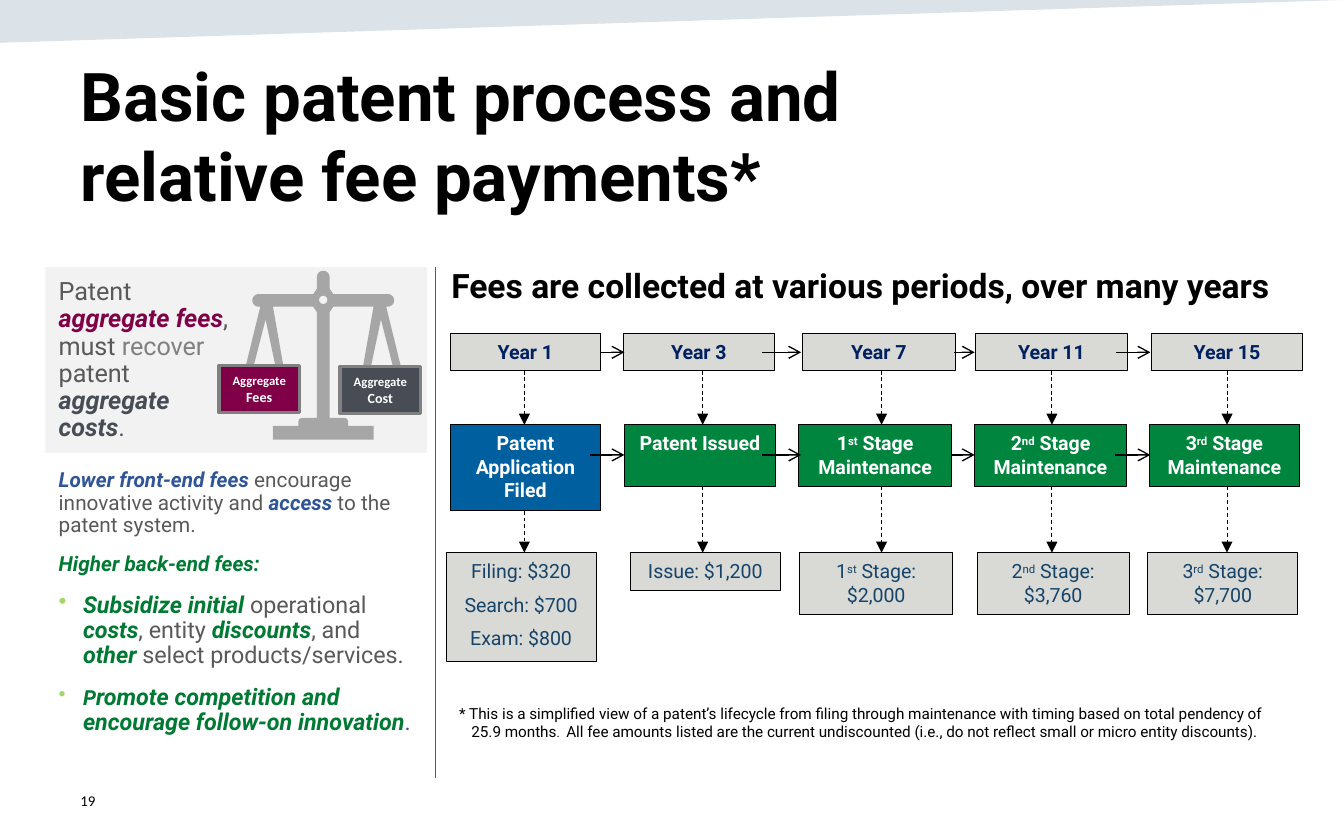
from math import cos, pi, sin

from lxml.etree import SubElement
from pptx import Presentation
from pptx.dml.color import RGBColor
from pptx.enum.dml import MSO_LINE_DASH_STYLE as DASH
from pptx.enum.shapes import MSO_CONNECTOR as CONN, MSO_SHAPE as SHAPE
from pptx.enum.text import MSO_ANCHOR as ANCHOR, PP_ALIGN as ALIGN
from pptx.oxml.ns import qn
from pptx.util import Cm, Pt

BLACK = RGBColor(0x00, 0x00, 0x00)
WHITE = RGBColor(0xFF, 0xFF, 0xFF)
NAVY = RGBColor(0x16, 0x44, 0x69)
YEAR_BLUE = RGBColor(0x00, 0x20, 0x60)
FILED_BLUE = RGBColor(0x00, 0x5F, 0x9E)
ACCENT_BLUE = RGBColor(0x2F, 0x55, 0x97)
BOX_GREEN = RGBColor(0x00, 0x85, 0x3E)
TEXT_GREEN = RGBColor(0x00, 0x7A, 0x33)
BULLET_GREEN = RGBColor(0xA4, 0xD7, 0x6B)
PLUM = RGBColor(0x7F, 0x00, 0x47)
SLATE = RGBColor(0x47, 0x4C, 0x55)
DARK_GREY = RGBColor(0x59, 0x59, 0x59)
MID_GREY = RGBColor(0x80, 0x80, 0x80)
SCALE_GREY = RGBColor(0xA6, 0xA6, 0xA6)
BOX_GREY = RGBColor(0xD9, 0xD9, 0xD6)
PANEL_GREY = RGBColor(0xF2, 0xF2, 0xF2)


def write(tf, paras, size=10.5, color=BLACK, font="Roboto", bold=False, align=ALIGN.LEFT,
          before=0, spacing=None, hanging=0, bullet=None, first=True):
    """Each paragraph is a list of runs: text, or (text, dict of run overrides)."""
    for i, runs in enumerate(paras):
        p = tf.paragraphs[0] if first and i == 0 else tf.add_paragraph()
        p.alignment, p.space_before = align, Pt(before)
        if spacing:
            p.line_spacing = spacing
        pPr = p._p.get_or_add_pPr()
        if hanging:
            pPr.set("marL", str(Cm(hanging)))
            pPr.set("indent", str(-Cm(hanging)))
        if bullet:
            SubElement(SubElement(pPr, qn("a:buClr")), qn("a:srgbClr")).set("val", str(bullet))
            SubElement(pPr, qn("a:buChar")).set("char", "•")
        for run in runs:
            text, own = (run, {}) if isinstance(run, str) else run
            for n, line in enumerate(text.split("\n")):
                if n:
                    p.add_line_break()
                r = p.add_run()
                r.text = line
                f = r.font
                f.name, f.size = font, Pt(own.get("size", size))
                f.color.rgb = own.get("color", color)
                f.bold, f.italic = own.get("bold", bold), own.get("italic", False)
                if own.get("sup"):
                    r._r.get_or_add_rPr().set("baseline", "30000")


def strong(text, color, **own):
    return text, dict(color=color, bold=True, italic=True, **own)


def textbox(s, x, y, w, h, paras, anchor=ANCHOR.TOP, **fmt):
    tf = s.shapes.add_textbox(Cm(x), Cm(y), Cm(w), Cm(h)).text_frame
    tf.word_wrap, tf.vertical_anchor = True, anchor
    write(tf, paras, **fmt)
    return tf


def box(s, x, y, w, h, fill, paras=(), line=BLACK, weight=0.5, margin=0.28,
        anchor=ANCHOR.TOP, **fmt):
    sp = s.shapes.add_shape(SHAPE.RECTANGLE, Cm(x), Cm(y), Cm(w), Cm(h))
    sp.shadow.inherit = False
    sp.fill.solid()
    sp.fill.fore_color.rgb = fill
    if line is None:
        sp.line.fill.background()
    else:
        sp.line.color.rgb, sp.line.width = line, Pt(weight)
    tf = sp.text_frame
    tf.word_wrap, tf.vertical_anchor = True, anchor
    tf.margin_left = tf.margin_right = Cm(margin)
    write(tf, paras, align=ALIGN.CENTER, **fmt)


def line(s, x1, y1, x2, y2, color=BLACK, weight=0.75, head=None, dashed=False):
    cn = s.shapes.add_connector(CONN.STRAIGHT, Cm(x1), Cm(y1), Cm(x2), Cm(y2))
    cn.line.color.rgb, cn.line.width = color, Pt(weight)
    if dashed:
        cn.line.dash_style = DASH.DASH
    if head:
        SubElement(cn.line._get_or_add_ln(), qn("a:tailEnd")).set("type", head)
    SubElement(cn._element.spPr, qn("a:effectLst"))


def outline(s, x, y, contours, fill):
    """Closed contours with points relative to (x, y)."""
    placed = [[(Cm(x + dx), Cm(y + dy)) for dx, dy in c] for c in contours]
    fb = s.shapes.build_freeform(*placed[0][0], scale=1.0)
    for i, pts in enumerate(placed):
        if i:
            fb.move_to(*pts[0])
        fb.add_line_segments(pts[1:], close=True)
    sp = fb.convert_to_shape()
    sp.shadow.inherit = False
    sp.fill.solid()
    sp.fill.fore_color.rgb = fill
    sp.line.fill.background()
    return sp


def arc(cx, cy, radius, start, end, steps=12):
    angles = [start + (end - start) * i / steps for i in range(steps + 1)]
    return [(cx + radius * cos(a), cy + radius * sin(a)) for a in angles]


def header(s, x, y, w):
    band = outline(s, x, y, [[(0, 0), (w, 0), (0, 0.81)]], NAVY)
    clr = band._element.spPr.find(qn("a:solidFill")).find(qn("a:srgbClr"))
    SubElement(clr, qn("a:alpha")).set("val", "15000")
    textbox(s, x + 1.27, y + 0.9, 22.86, 2.41,
            [["Basic patent process and \nrelative fee payments*"]], size=36, bold=True)


def balance(s, cx, y):
    """Pair of scales: the right half is listed and mirrored."""
    right = arc(0, 0.12, 0.12, -pi / 2, 0)
    right += [(0.12, 0.34), (0.19, 0.44)] + arc(1.22, 0.56, 0.12, -pi / 2, pi / 2)
    right += [(1.19, 0.68), (1.47, 1.82), (1.32, 1.82), (1.09, 0.92), (0.9, 1.82),
              (0.75, 1.82), (0.95, 0.68), (0.19, 0.68), (0.12, 0.78), (0.12, 2.78)]
    right += arc(0.39, 2.86, 0.08, -pi / 2, 0) + [(0.47, 2.93), (0.95, 2.93), (0.95, 3.19)]
    left = [(-dx, dy) for dx, dy in reversed(right)]
    outline(s, cx, y, [right + left, arc(0, 0.55, 0.08, 0, 2 * pi)], SCALE_GREY)
    for dx, dy, word, fill in ((-1.97, 1.79, "Fees", PLUM), (0.32, 1.81, "Cost", SLATE)):
        box(s, cx + dx, y + dy, 1.52, 0.89, fill, [["Aggregate ", (word, {"size": 7.5})]],
            line=MID_GREY, weight=2, margin=0, anchor=ANCHOR.MIDDLE,
            size=6.8, color=WHITE, font="Calibri", bold=True)


def fee_panel(s, x, y, w):
    box(s, x, y, w, 3.51, PANEL_GREY, line=None)
    textbox(s, x, y + 0.1, 3.99, 3.51,
            [["Patent ", strong("aggregate fees", PLUM), ", \nmust ",
              ("recover", {"color": MID_GREY}), " patent ",
              strong("aggregate \ncosts", SLATE), "."]],
            size=13.5, color=DARK_GREY, spacing=0.9)
    balance(s, x + 5.25, y + 0.07)

    # Front-end and back-end fees
    fmt = dict(color=DARK_GREY, spacing=0.9, before=9)
    tf = textbox(s, x, y + 3.71, w + 0.03, 5.79,
                 [[strong("Lower front-end fees ", ACCENT_BLUE),
                   "encourage innovative activity and ", strong("access", ACCENT_BLUE),
                   " to the patent system."],
                  [strong("Higher back-end fees:", TEXT_GREEN)]], size=11.1, **fmt)
    write(tf, [[strong("Subsidize initial ", TEXT_GREEN), "operational ",
                strong("costs", TEXT_GREEN), ", entity ", strong("discounts", TEXT_GREEN),
                ", and ", strong("other", TEXT_GREEN), " select products/services."],
               [strong("P", TEXT_GREEN, size=11.1),
                strong("romote competition and encourage follow-on innovation", TEXT_GREEN),
                (".", {"color": ACCENT_BLUE})]],
          size=12.5, hanging=0.46, bullet=BULLET_GREEN, first=False, **fmt)


def ordinal(number, suffix, rest):
    return [[number, (suffix, {"sup": True}), rest]]


def timeline(s, x, y):
    textbox(s, x, y, 16.74, 1.02, [["Fees are collected at various periods, over many years"]],
            size=18, bold=True)
    year_y, stage_y, fee_y = y + 1.42, y + 3.15, y + 5.57
    # Year, left edges of the three boxes, width, axis, stage, fees, heights of both
    columns = [
        ("1", (0.23, 0.23, 0.15), 2.84, 1.63, [["Patent Application Filed"]],
         [["Filing: $320"], ["Search: $700"], ["Exam: $800"]], 1.63, 2.06),
        ("3", (3.51, 3.53, 3.63), 2.84, 5.0, [["Patent Issued"]],
         [["Issue: $1,200"]], 1.17, 0.71),
        ("7", (6.88, 6.81, 6.83), 2.9, 8.38, ordinal("1", "st", " Stage Maintenance"),
         ordinal("1", "st", " Stage: $2,000"), 1.17, 1.17),
        ("11", (10.16, 10.14, 10.19), 2.87, 11.6, ordinal("2", "nd", " Stage Maintenance"),
         ordinal("2", "nd", " Stage: $3,760"), 1.17, 1.17),
        ("15", (13.49, 13.44, 13.41), 2.84, 14.91, ordinal("3", "rd", " Stage Maintenance"),
         ordinal("3", "rd", " Stage: $7,700"), 1.17, 1.17),
    ]
    for year, (year_x, stage_x, fee_x), w, axis, stage, fees, stage_h, fee_h in columns:
        box(s, x + year_x, year_y, w, 0.71, BOX_GREY, [[f"Year {year}"]],
            color=YEAR_BLUE, bold=True)
        box(s, x + stage_x, stage_y, w, stage_h, FILED_BLUE if year == "1" else BOX_GREEN,
            stage, color=WHITE, bold=True)
        box(s, x + fee_x, fee_y, w, fee_h, BOX_GREY, fees, color=NAVY, before=5.25)
        for top, bottom in ((year_y + 0.71, stage_y), (stage_y + stage_h, fee_y)):
            line(s, x + axis, top, x + axis, bottom, weight=0.5, head="triangle", dashed=True)

    # Arrows from one column to the next
    for row_y, starts in ((year_y + 0.36, (3.07, 6.12, 9.75, 12.82)),
                          (stage_y + 0.57, (2.87, 6.12, 9.7, 12.8))):
        for start, end in zip(starts, (3.52, 6.86, 10.14, 13.46)):
            line(s, x + start, row_y, x + end, row_y, head="arrow")


def footer(s, x, y):
    textbox(s, x + 7.16, y, 15.88, 0.97,
            [["* This is a simplified view of a patent’s lifecycle from filing through "
              "maintenance with timing based on total pendency of 25.9 months",
              (".  ", {"size": 6.8}),
              "All fee amounts listed are the current undiscounted (i.e., do not reflect "
              "small or micro entity discounts)."]], size=8.2, hanging=0.23)
    textbox(s, x, y + 1.53, 5.72, 0.84, [["19"]], anchor=ANCHOR.MIDDLE, size=8, font="Calibri")


def main():
    prs = Presentation()
    prs.slide_width, prs.slide_height = Cm(25.4), Cm(15.88)
    s = prs.slides.add_slide(prs.slide_layouts[6])
    header(s, 0, 0, 25.4)
    fee_panel(s, 0.86, 5.05, 7.21)
    line(s, 8.23, 5.05, 8.23, 14.71, color=DARK_GREY)
    timeline(s, 8.28, 4.88)
    footer(s, 1.27, 13.18)
    prs.save("out.pptx")


if __name__ == "__main__":
    main()
